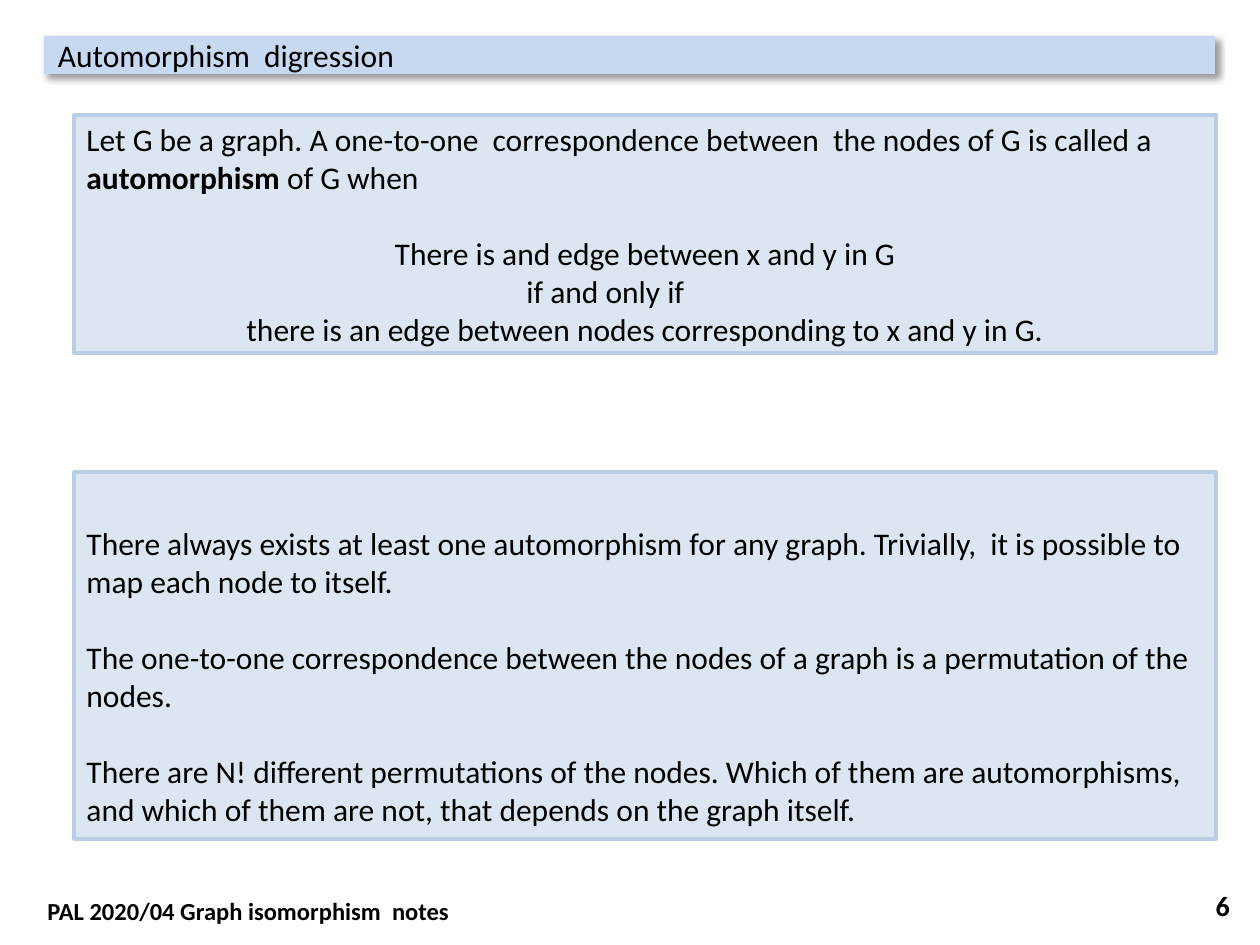
from lxml import etree
from pptx import Presentation
from pptx.dml.color import RGBColor
from pptx.enum.shapes import MSO_SHAPE
from pptx.enum.text import MSO_ANCHOR, PP_ALIGN
from pptx.oxml.ns import nsdecls
from pptx.util import Pt

RECT = MSO_SHAPE.RECTANGLE
TOP, MID = MSO_ANCHOR.TOP, MSO_ANCHOR.MIDDLE
LEFT, MIDDLE, RIGHT = PP_ALIGN.LEFT, PP_ALIGN.CENTER, PP_ALIGN.RIGHT

THEME = {
    "font": "Calibri", "text": "000000",
    "bar": "C6D9F1", "panel": "DCE6F2", "edge": "B9CDE5",
    "body": 18, "page": 16, "foot": 14, "gap": 22,
}
SHADOW = f"""<a:effectLst {nsdecls('a')}>
  <a:outerShdw blurRad="50800" dist="38100" dir="2700000" algn="tl" rotWithShape="0">
    <a:srgbClr val="000000"><a:alpha val="40000"/></a:srgbClr>
  </a:outerShdw>
</a:effectLst>"""


def px(n):
    return round(n * 914400 / 126)


def write(shape, paras, size, frame):
    """Fill a shape with (align, format, [(text, bold), ...]) paragraphs."""
    box = shape.text_frame
    box.word_wrap = True
    for name, value in frame.items():
        setattr(box, name, value)
    for i, (align, form, runs) in enumerate(paras):
        para = box.add_paragraph() if i else box.paragraphs[0]
        para.alignment = align
        for name, value in form.items():
            if name == "indent":
                para._p.get_or_add_pPr().set("marL", str(px(value)))
            else:
                setattr(para, name, value)
        for text, bold in runs:
            run = para.add_run()
            run.text = text
            look = {"name": THEME["font"], "size": Pt(size), "bold": bold}
            for name, value in look.items():
                setattr(run.font, name, value)
            run.font.color.rgb = RGBColor.from_string(THEME["text"])


deck = Presentation()
deck.slide_width, deck.slide_height = px(1260), px(945)
slide = deck.slides.add_slide(deck.slide_layouts[6])
shapes = slide.shapes
gap = {"space_before": Pt(THEME["gap"])}

# Title bar
bar = shapes.add_shape(RECT, px(44), px(36), px(1171), px(38))
bar.fill.solid()
bar.fill.fore_color.rgb = RGBColor.from_string(THEME["bar"])
bar.line.fill.background()
bar._element.spPr.append(etree.fromstring(SHADOW))
write(bar, [(LEFT, {}, [("Automorphism  digression", False)])], THEME["body"],
      {"vertical_anchor": MID, "margin_left": px(14), "margin_right": 0,
       "margin_top": 0, "margin_bottom": 0})

# Page number and footer
LABELS = [
    ((948, 880, 294, 50), "6", RIGHT, THEME["page"], MID),
    ((35, 890, 1181, 42), "PAL 2020/04 Graph isomorphism  notes", LEFT,
     THEME["foot"], TOP),
]
for area, text, align, size, anchor in LABELS:
    label = shapes.add_textbox(*map(px, area))
    write(label, [(align, {}, [(text, True)])], size, {"vertical_anchor": anchor})

# Definition and remarks
define = [
    (LEFT, {}, [
        ("Let G be a graph. A one-to-one  correspondence between  the nodes of G "
         "is called a ", False),
        ("automorphism", True), (" of G when", False)]),
    (MIDDLE, gap, [("There is and edge between x and y in G", False)]),
    (LEFT, {"indent": 440}, [("if and only if", False)]),
    (MIDDLE, {}, [("there is an edge between nodes corresponding to x and y in G.",
                   False)]),
]
facts = [
    "There always exists at least one automorphism for any graph. Trivially,  "
    "it is possible to map each node to itself.",
    "The one-to-one correspondence between the nodes of a graph is a permutation "
    "of the nodes.",
    "There are N! different permutations of the nodes. Which of them are "
    "automorphisms, and which of them are not, that depends on the graph itself.",
]
remarks = [(LEFT, gap if i else {}, [(fact, False)]) for i, fact in enumerate(facts)]
PANELS = [
    (115, 238, define, {"vertical_anchor": MID}),
    (472, 367, remarks, {"vertical_anchor": TOP, "margin_top": px(52)}),
]
for top, height, paras, frame in PANELS:
    panel = shapes.add_shape(RECT, px(74), px(top), px(1142), px(height))
    panel.shadow.inherit = False
    panel.fill.solid()
    panel.fill.fore_color.rgb = RGBColor.from_string(THEME["panel"])
    panel.line.color.rgb = RGBColor.from_string(THEME["edge"])
    panel.line.width = Pt(2)
    write(panel, paras, THEME["body"], frame)

deck.save("out.pptx")
